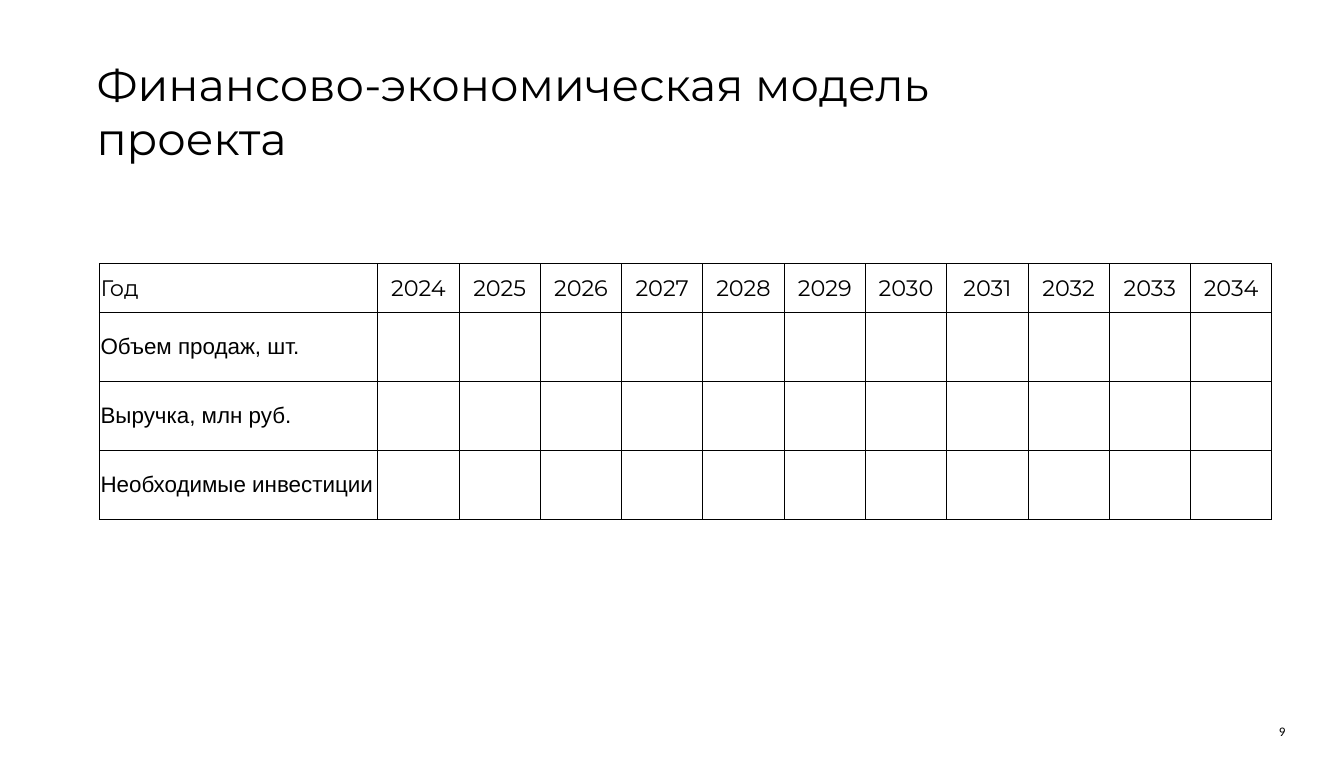
from lxml.etree import SubElement
from pptx import Presentation
from pptx.dml.color import RGBColor
from pptx.enum.text import MSO_ANCHOR, MSO_AUTO_SIZE, PP_ALIGN
from pptx.oxml.ns import qn
from pptx.util import Pt

BLACK = RGBColor(0x00, 0x00, 0x00)
WHITE = RGBColor(0xFF, 0xFF, 0xFF)

YEARS = [str(year) for year in range(2024, 2035)]
INDICATORS = ["Объем продаж, шт.", "Выручка, млн руб.", "Необходимые инвестиции"]
LABEL_WIDTH = 149.2
HEADER_HEIGHT = 26.2


def write_text(text_frame, text, font_name, size, alignment=PP_ALIGN.LEFT):
    text_frame.text = text
    paragraph = text_frame.paragraphs[0]
    paragraph.alignment = alignment
    font = paragraph.runs[0].font
    font.name, font.size, font.bold = font_name, Pt(size), False
    font.color.rgb = BLACK
    return paragraph


def place(shape, left, top, width, height):
    shape.left, shape.top = Pt(left), Pt(top)
    shape.width, shape.height = Pt(width), Pt(height)


def add_title(slide, box):
    title = slide.shapes.title
    place(title, *box)
    text_frame = title.text_frame
    text_frame.word_wrap = True
    text_frame.auto_size = MSO_AUTO_SIZE.NONE
    text_frame.vertical_anchor = MSO_ANCHOR.TOP
    write_text(text_frame, "Финансово-экономическая модель проекта", "Montserrat", 24)


def add_borders(cell):
    properties = cell._tc.get_or_add_tcPr()
    for side in ("a:lnL", "a:lnR", "a:lnT", "a:lnB"):
        line = SubElement(properties, qn(side), w=str(Pt(0.5)))
        fill = SubElement(line, qn("a:solidFill"))
        SubElement(fill, qn("a:srgbClr"), val=str(BLACK))


def format_cell(cell):
    cell.margin_left = cell.margin_top = cell.margin_right = Pt(0.7)
    cell.margin_bottom = Pt(0)
    cell.vertical_anchor = MSO_ANCHOR.MIDDLE
    add_borders(cell)
    cell.fill.solid()
    cell.fill.fore_color.rgb = WHITE


def add_model_table(slide, box):
    left, top, width, height = box
    frame = slide.shapes.add_table(
        len(INDICATORS) + 1, len(YEARS) + 1, Pt(left), Pt(top), Pt(width), Pt(height)
    )
    table = frame.table
    table.first_row = table.horz_banding = False

    # Label column, then equal year columns; header, then equal rows
    for index, column in enumerate(table.columns):
        column.width = Pt((width - LABEL_WIDTH) / len(YEARS) if index else LABEL_WIDTH)
    for index, row in enumerate(table.rows):
        row.height = Pt((height - HEADER_HEIGHT) / len(INDICATORS) if index else HEADER_HEIGHT)
    for cell in table.iter_cells():
        format_cell(cell)

    # Header row
    write_text(table.cell(0, 0).text_frame, "Год", "Montserrat", 12)
    for index, year in enumerate(YEARS, start=1):
        write_text(table.cell(0, index).text_frame, year, "Montserrat", 12, PP_ALIGN.CENTER)

    # Indicator labels
    for index, indicator in enumerate(INDICATORS, start=1):
        paragraph = write_text(table.cell(index, 0).text_frame, indicator, "Arial", 12)
        paragraph.line_spacing = 0.9


def add_slide_number(slide, box):
    number = slide.shapes.add_textbox(*map(Pt, box))
    text_frame = number.text_frame
    text_frame.word_wrap = True
    text_frame.margin_left = text_frame.margin_right = Pt(0)
    text_frame.margin_top = text_frame.margin_bottom = Pt(0)
    text_frame.vertical_anchor = MSO_ANCHOR.BOTTOM
    write_text(text_frame, "9", "Calibri", 7, PP_ALIGN.RIGHT)


def main():
    presentation = Presentation()
    presentation.slide_width, presentation.slide_height = Pt(720), Pt(405.36)
    slide = presentation.slides.add_slide(presentation.slide_layouts[5])
    add_title(slide, (44.5, 26.8, 484, 65.5))
    add_model_table(slide, (53.2, 141.2, 628.4, 136.8))
    add_slide_number(slide, (644.4, 385.2, 44.2, 10.8))
    presentation.save("out.pptx")


if __name__ == "__main__":
    main()
